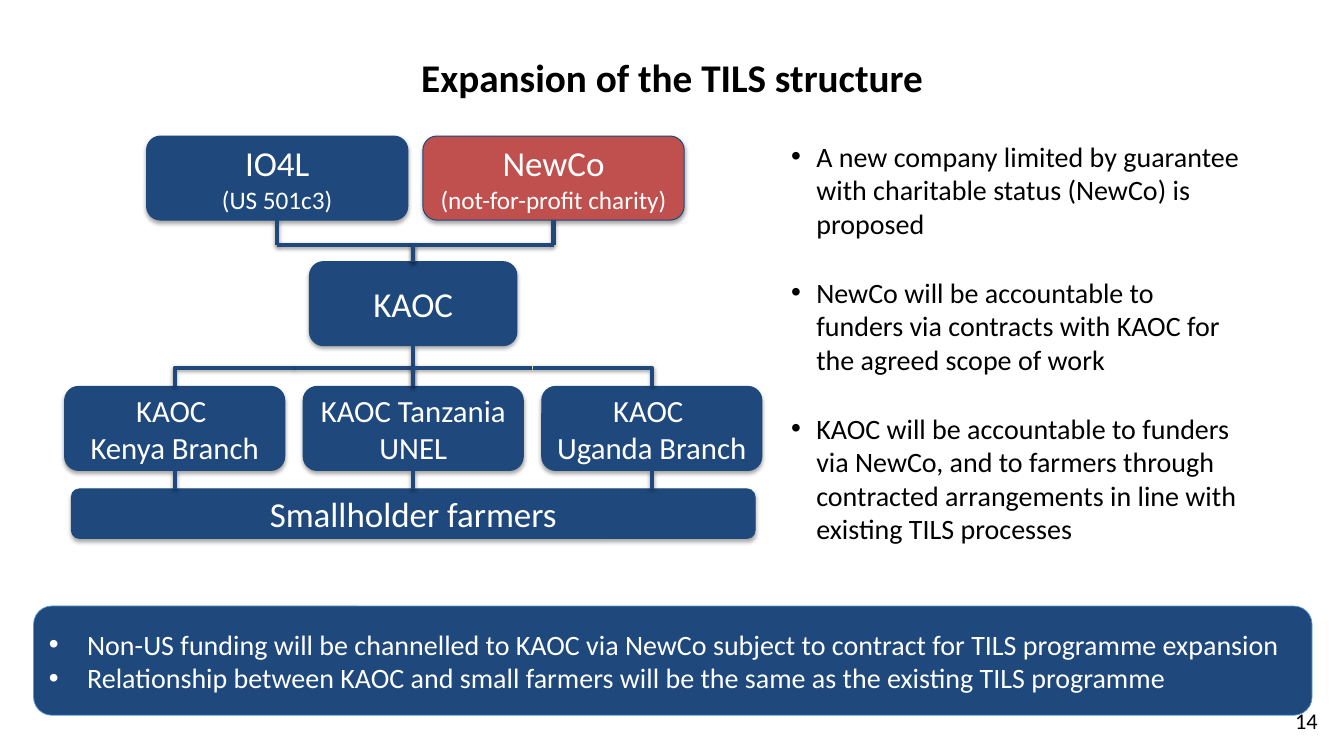
from lxml import etree
from pptx import Presentation
from pptx import util as u
from pptx.dml.color import RGBColor
from pptx.enum import shapes, text
from pptx.oxml.ns import qn

NAVY = RGBColor(0x1F, 0x49, 0x7D)
RED = RGBColor(0xC0, 0x50, 0x4D)
SKY = RGBColor(0x5B, 0x9B, 0xD5)
WHITE = RGBColor(0xFF, 0xFF, 0xFF)
BLACK = RGBColor(0, 0, 0)
CENTER, LEFT = text.PP_ALIGN.CENTER, text.PP_ALIGN.LEFT
MIDDLE, TOP = text.MSO_ANCHOR.MIDDLE, text.MSO_ANCHOR.TOP
STRAIGHT, ELBOW = shapes.MSO_CONNECTOR.STRAIGHT, shapes.MSO_CONNECTOR.ELBOW

prs = Presentation()
CELL = u.Inches(1) / 12  # the slide is a grid of 160 columns by 90 rows
prs.slide_width, prs.slide_height = round(160 * CELL), round(90 * CELL)
s = prs.slides.add_slide(prs.slide_layouts[6])


def write(sp, lines, color, align=LEFT, anchor=MIDDLE, indent=0, gap=0, bold=False):
    """Fill sp with (text, size) paragraphs; an indent in inches adds bullets."""
    tf = sp.text_frame
    tf.word_wrap, tf.vertical_anchor = True, anchor
    for i, (line, size) in enumerate(lines):
        p = tf.add_paragraph() if i else tf.paragraphs[0]
        p.alignment = align
        p.space_before = u.Pt(gap if i else 0)
        r = p.add_run()
        r.text = line
        for name, value in {"name": "Calibri", "size": u.Pt(size), "bold": bold}.items():
            setattr(r.font, name, value)
        r.font.color.rgb = color
        if indent:
            pPr = p._p.get_or_add_pPr()
            pPr.set("marL", str(u.Inches(indent)))
            pPr.set("indent", str(-u.Inches(indent)))
            etree.SubElement(pPr, qn("a:buFont")).set("typeface", "Arial")
            etree.SubElement(pPr, qn("a:buChar")).set("char", "•")


def cast_shadow(sp, distance, alpha):
    """Drop a soft black shadow straight down."""
    spPr = sp._element.spPr
    effects = spPr.find(qn("a:effectLst"))
    if effects is None:
        effects = etree.SubElement(spPr, qn("a:effectLst"))
    shadow = etree.SubElement(effects, qn("a:outerShdw"), blurRad=str(u.Pt(3.1)),
                              dist=str(u.Pt(distance)), dir="5400000", rotWithShape="0")
    black = etree.SubElement(shadow, qn("a:srgbClr"), val="000000")
    etree.SubElement(black, qn("a:alpha"), val=str(alpha * 1000))


# Title, bullets and page number
title = s.shapes.add_textbox(*(round(n * CELL) for n in (11, 4.8, 138, 9.5)))
write(title, [("Expansion of the TILS structure", 28)], BLACK, CENTER, bold=True)
title.text_frame.paragraphs[0].line_spacing = 0.9

points = s.shapes.add_textbox(*(round(n * CELL) for n in (93, 16, 56, 54.7)))
write(points, [
    ("A new company limited by guarantee with charitable status (NewCo) is proposed", 20),
    ("NewCo will be accountable to funders via contracts with KAOC for the agreed scope of work", 20),
    ("KAOC will be accountable to funders via NewCo, and to farmers through contracted "
     "arrangements in line with existing TILS processes", 20),
], BLACK, anchor=TOP, indent=0.25, gap=25)

page = s.shapes.add_textbox(*(round(n * CELL) for n in (153, 83.55, 5.2, 4.4)))
write(page, [("14", 16)], BLACK, anchor=TOP)

# Organisation boxes: two parents, then a hub and branches on one axis
AXIS, PARENT_AXIS, PARENT_STEP, BRANCH_STEP = 49.2, 49.45, 16.45, 28.4
PARENT_X = [PARENT_AXIS - PARENT_STEP, PARENT_AXIS + PARENT_STEP]
BRANCH_X = [AXIS - BRANCH_STEP, AXIS, AXIS + BRANCH_STEP]
PARENT = (16.2, 31.1, 10)  # top, width, height
HUB = (31.15, 24.7, 10)
BRANCH = (46, 26.2, 10)
FARMERS = (58.2, 81.4, 5.9)

boxes = []
for x, (top, width, height), fill, lines in [
    (PARENT_X[0], PARENT, NAVY, [("IO4L", 25), ("(US 501c3)", 18)]),
    (PARENT_X[1], PARENT, RED, [("NewCo", 25), ("(not-for-profit charity)", 18)]),
    (AXIS, HUB, NAVY, [("KAOC", 25)]),
    (BRANCH_X[0], BRANCH, NAVY, [("KAOC ", 22), ("Kenya Branch", 22)]),
    (BRANCH_X[1], BRANCH, NAVY, [("KAOC Tanzania UNEL", 22)]),
    (BRANCH_X[2], BRANCH, NAVY, [("KAOC ", 22), ("Uganda Branch", 22)]),
    (AXIS, FARMERS, NAVY, [("Smallholder farmers", 25)]),
]:
    sp = s.shapes.add_shape(shapes.MSO_SHAPE.ROUNDED_RECTANGLE,
                            *(round(n * CELL) for n in (x - width / 2, top, width, height)))
    sp.shadow.inherit = False
    sp.fill.solid()
    sp.fill.fore_color.rgb = fill
    sp.line.color.rgb, sp.line.width = NAVY, u.Pt(0.75)
    cast_shadow(sp, 1.8, 35)
    write(sp, lines, WHITE, CENTER)
    boxes.append(sp)
parents, hub, branches, farmers = boxes[:2], boxes[2], boxes[3:6], boxes[6]

# Links: (kind, box above, start, end, box below); elbows run along a bus, then down
UPPER_BUS, LOWER_BUS = 29.15, 43.8
links = [(STRAIGHT, hub, (AXIS, HUB[0] + HUB[2]), (AXIS, LOWER_BUS), None)]
for x, parent in zip(PARENT_X, parents):
    links += [
        (STRAIGHT, parent, (x, PARENT[0] + PARENT[2]), (x, UPPER_BUS), None),
        (ELBOW, None, (x, UPPER_BUS), (AXIS, HUB[0]), None),
    ]
for side in (-1, 1):
    halfway = AXIS + side * BRANCH_STEP / 2
    for x in (AXIS, AXIS + side * BRANCH_STEP):
        links.append((ELBOW, None, (halfway, LOWER_BUS), (x, BRANCH[0]), None))
for x, branch in zip(BRANCH_X, branches):
    links.append((STRAIGHT, branch, (x, BRANCH[0] + BRANCH[2]), (x, FARMERS[0]),
                  farmers if x == AXIS else None))

for kind, above, start, end, below in links:
    link = s.shapes.add_connector(kind, *(round(n * CELL) for n in start + end))
    if kind == ELBOW:
        link._element.spPr.find(qn("a:prstGeom")).set("prst", "bentConnector2")
    link.line.color.rgb, link.line.width = NAVY, u.Pt(3)
    cast_shadow(link, 1.6, 38)
    if above:
        link.begin_connect(above, 2)
    if below:
        link.end_connect(below, 0)

# Closing banner
banner = s.shapes.add_shape(shapes.MSO_SHAPE.ROUNDED_RECTANGLE,
                            *(round(n * CELL) for n in (4, 72.15, 152.2, 13)))
banner.shadow.inherit = False
banner.fill.solid()
banner.fill.fore_color.rgb = NAVY
banner.line.color.rgb, banner.line.width = SKY, u.Pt(0.5)
write(banner, [
    ("Non-US funding will be channelled to KAOC via NewCo subject to contract for TILS "
     "programme expansion", 20),
    ("Relationship between KAOC and small farmers will be the same as the existing TILS programme", 20),
], WHITE, indent=0.38)

prs.save("out.pptx")
